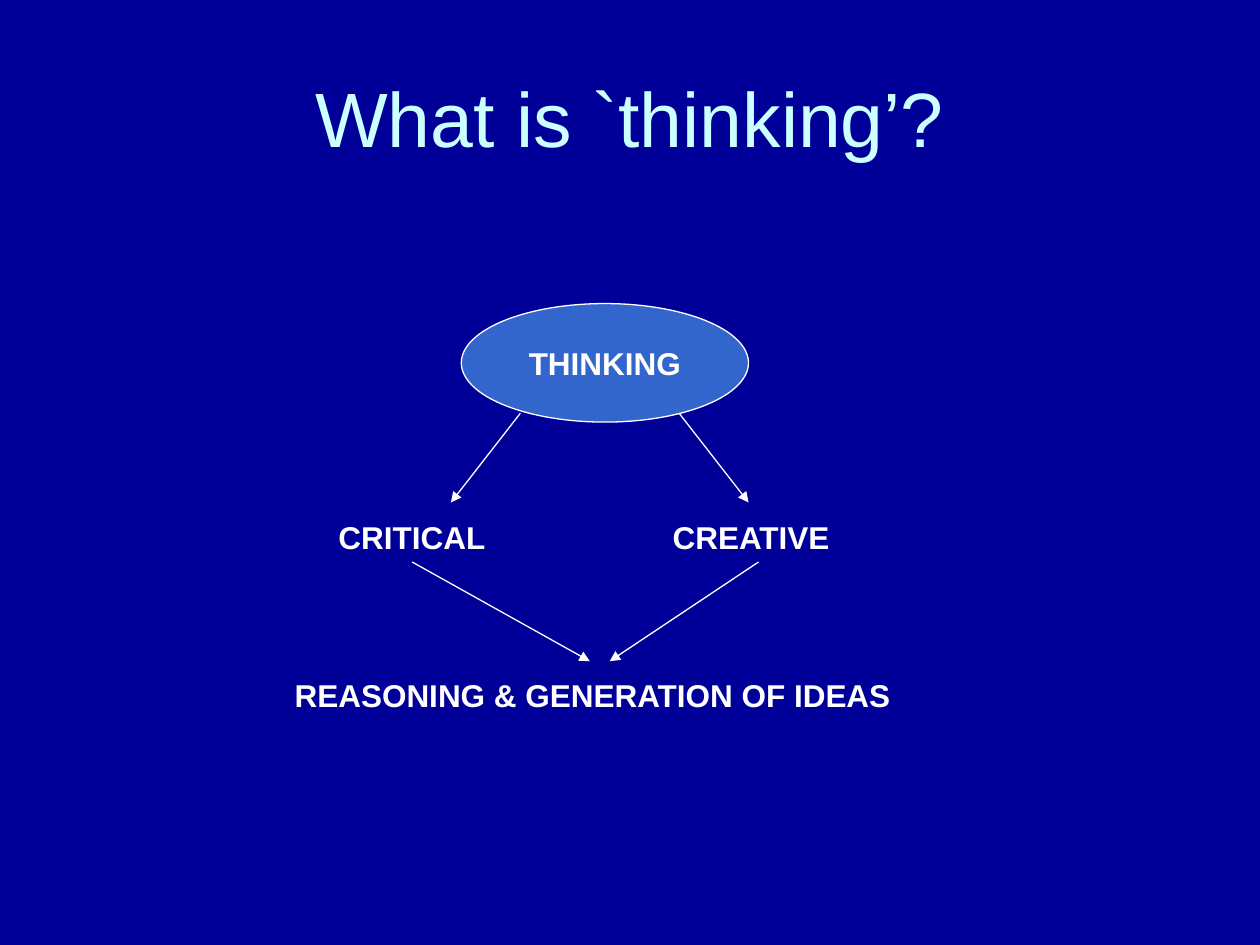
import dataclasses

import pptx
import pptx.dml.color
import pptx.enum.shapes
import pptx.enum.text
import pptx.oxml
import pptx.oxml.ns
import pptx.util

Cm = pptx.util.Cm
Pt = pptx.util.Pt
ALIGN = pptx.enum.text.PP_ALIGN
MIDDLE = pptx.enum.text.MSO_ANCHOR.MIDDLE


@dataclasses.dataclass(frozen=True)
class Theme:
    background: str = "000099"
    title: str = "CCFFFF"
    ink: str = "FFFFFF"
    node: str = "3366CC"
    font: str = "Arial"
    title_size: int = 44
    label_size: int = 18
    line_width: float = 0.75


@dataclasses.dataclass(frozen=True)
class Box:
    """A region in centimetres."""
    left: float
    top: float
    width: float
    height: float

    def inner(self, left, top, width, height):
        return Box(self.left + left, self.top + top, width, height)

    def lengths(self):
        return [Cm(side) for side in (self.left, self.top, self.width, self.height)]


THEME = Theme()


def color(code):
    return pptx.dml.color.RGBColor.from_string(code)


def write(shape, text, size, code, align, bold=False):
    para = shape.text_frame.paragraphs[0]
    para.text = text
    para.alignment = align
    para.font.name = THEME.font
    para.font.size = Pt(size)
    para.font.bold = bold
    para.font.color.rgb = color(code)


def style_line(line):
    line.color.rgb = color(THEME.ink)
    line.width = Pt(THEME.line_width)


def add_title(page, box, text):
    title = page.shapes.title
    title.left, title.top, title.width, title.height = box.lengths()
    title.text_frame.vertical_anchor = MIDDLE
    write(title, text, THEME.title_size, THEME.title, ALIGN.CENTER)


def add_node(page, box, text):
    node = page.shapes.add_shape(pptx.enum.shapes.MSO_SHAPE.OVAL, *box.lengths())
    node.shadow.inherit = False
    node.fill.solid()
    node.fill.fore_color.rgb = color(THEME.node)
    style_line(node.line)
    node.text_frame.word_wrap = False
    node.text_frame.vertical_anchor = MIDDLE
    write(node, text, THEME.label_size, THEME.ink, ALIGN.CENTER, bold=True)


def add_label(page, box, text, align):
    label = page.shapes.add_textbox(*box.lengths())
    label.text_frame.word_wrap = True
    label.text_frame.auto_size = pptx.enum.text.MSO_AUTO_SIZE.SHAPE_TO_FIT_TEXT
    write(label, text, THEME.label_size, THEME.ink, align, bold=True)


def add_arrow(page, box, start, end):
    ends = [Cm(value) for x, y in (start, end)
            for value in (box.left + x, box.top + y)]
    arrow = page.shapes.add_connector(
        pptx.enum.shapes.MSO_CONNECTOR.STRAIGHT, *ends)
    style_line(arrow.line)
    # Arrowhead at the end point, and no shadow
    head = pptx.oxml.parse_xml(
        f'<a:tailEnd {pptx.oxml.ns.nsdecls("a")} type="triangle"/>')
    arrow.line._get_or_add_ln().append(head)
    arrow._element.spPr.append(
        pptx.oxml.parse_xml(f'<a:effectLst {pptx.oxml.ns.nsdecls("a")}/>'))


def add_diagram(page, box):
    # Starting idea
    add_node(page, box.inner(4.6, 0, 5.79, 2.39), "THINKING")

    # Branches out to the two kinds, then back to the result
    branch_top, branch_end, merge_top, merge_end = 2.21, 4.01, 5.21, 7.21
    for outer, inner in ((4.39, 5.79), (10.39, 8.99)):
        add_arrow(page, box, (inner, branch_top), (outer, branch_end))
    for outer, inner in ((3.61, 7.19), (10.59, 7.59)):
        add_arrow(page, box, (outer, merge_top), (inner, merge_end))

    # Labels
    for text, left, top, width, align in (
        ("CRITICAL", 0, 4.19, 7.21, ALIGN.CENTER),
        ("CREATIVE", 8.61, 4.19, 5.41, ALIGN.LEFT),
        ("REASONING & GENERATION OF IDEAS", 0.99, 7.39, 14.6, ALIGN.LEFT),
    ):
        add_label(page, box.inner(left, top, width, 1.02), text, align)


def main():
    deck = pptx.Presentation()
    deck.slide_width, deck.slide_height = Cm(25.4), Cm(19.05)
    page = deck.slides.add_slide(deck.slide_layouts.get_by_name("Title Only"))
    page.background.fill.solid()
    page.background.fill.fore_color.rgb = color(THEME.background)

    add_title(page, Box(1.27, 0.76, 22.86, 3.18), "What is `thinking’?")
    add_diagram(page, Box(4.7, 6.12, 15.6, 8.41))
    deck.save("out.pptx")


if __name__ == "__main__":
    main()
